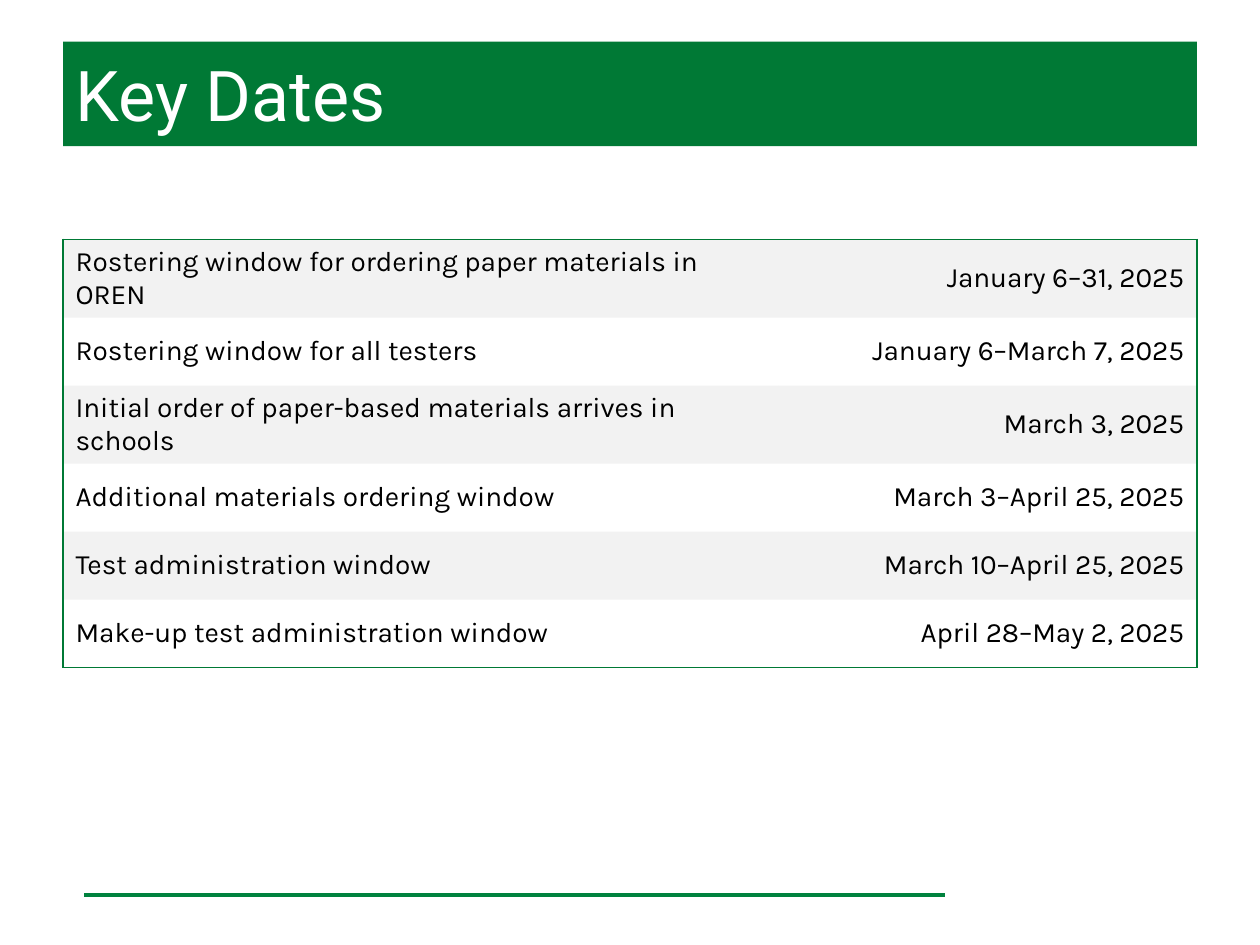
from lxml import etree
from pptx import Presentation
from pptx import util as u
from pptx.dml.color import RGBColor
from pptx.enum import shapes, text
from pptx.oxml import ns

TITLE = "Key Dates"
DATES = [
    ("Rostering window for ordering paper materials in OREN", "January 6–31, 2025"),
    ("Rostering window for all testers", "January 6–March 7, 2025"),
    ("Initial order of paper-based materials arrives in schools", "March 3, 2025"),
    ("Additional materials ordering window", "March 3–April 25, 2025"),
    ("Test administration window", "March 10–April 25, 2025"),
    ("Make-up test administration window", "April 28–May 2, 2025"),
]
COLUMNS = [(5.68, text.PP_ALIGN.LEFT), (3.32, text.PP_ALIGN.RIGHT)]
ROW_HEIGHT = 0.54
GREEN, RULE_GREEN, BAND, WHITE, BLACK = "007935", "00823E", "BFBFBF", "FFFFFF", "000000"
NO_GRID_STYLE = "{2D5ABB26-0587-4C30-8999-92F81FD0307C}"


def paint(target, color):
    target.solid()
    target.fore_color.rgb = RGBColor.from_string(color)


def write(para, words, font, size, color, align):
    para.alignment = align
    span = para.add_run()
    span.text = words
    span.font.name, span.font.size = font, u.Pt(size)
    paint(span.font.fill, color)


def add_rule(page):
    rule = page.shapes.add_connector(
        shapes.MSO_CONNECTOR.STRAIGHT, u.Inches(0.67), u.Inches(7.1), u.Inches(7.5), u.Inches(7.1))
    paint(rule.line.fill, RULE_GREEN)
    rule.line.width = u.Pt(2.25)
    etree.SubElement(rule._element.spPr, ns.qn("a:effectLst"))


def add_title(page):
    box = page.shapes.title
    box.left, box.top, box.width, box.height = map(u.Inches, (0.5, 0.33, 9, 0.83))
    paint(box.fill, GREEN)
    frame = box.text_frame
    frame.auto_size = text.MSO_AUTO_SIZE.NONE
    frame.vertical_anchor = text.MSO_ANCHOR.MIDDLE
    write(frame.paragraphs[0], TITLE, "Roboto", 40, WHITE, text.PP_ALIGN.LEFT)


def add_border(cell, side):
    line = etree.SubElement(cell._tc.get_or_add_tcPr(), ns.qn(f"a:ln{side}"), w=str(u.Pt(1)))
    fill = etree.SubElement(line, ns.qn("a:solidFill"))
    etree.SubElement(fill, ns.qn("a:srgbClr"), val=GREEN)


def shade(cell, banded):
    if not banded:
        cell.fill.background()
        return
    paint(cell.fill, BAND)
    color = cell._tc.tcPr.find(ns.qn("a:solidFill"))[0]
    etree.SubElement(color, ns.qn("a:alpha"), val="20000")


def add_dates(page):
    last_row, last_column = len(DATES) - 1, len(COLUMNS) - 1
    frame = page.shapes.add_table(
        len(DATES), len(COLUMNS), u.Inches(0.5), u.Inches(1.9),
        u.Inches(sum(width for width, _ in COLUMNS)), u.Inches(ROW_HEIGHT * len(DATES)))
    table = frame.table
    table.first_row = table.horz_banding = False
    table._tbl.tblPr.find(ns.qn("a:tableStyleId")).text = NO_GRID_STYLE
    for column, (width, _) in zip(table.columns, COLUMNS):
        column.width = u.Inches(width)
    for r, entry in enumerate(DATES):
        table.rows[r].height = u.Inches(ROW_HEIGHT)
        for c, words in enumerate(entry):
            cell = table.cell(r, c)
            cell.vertical_anchor = text.MSO_ANCHOR.MIDDLE
            edges = {"L": c == 0, "R": c == last_column, "T": r == 0, "B": r == last_row}
            for side, outer in edges.items():
                if outer:
                    add_border(cell, side)
            shade(cell, r % 2 == 0)
            write(cell.text_frame.paragraphs[0], words, "Karla", 16, BLACK, COLUMNS[c][1])


def main():
    """Build the key dates slide."""
    deck = Presentation()
    deck.slide_width, deck.slide_height = u.Inches(10), u.Inches(7.5)
    page = deck.slides.add_slide(deck.slide_layouts[5])
    add_rule(page)
    add_title(page)
    add_dates(page)
    deck.save("out.pptx")


if __name__ == "__main__":
    main()
